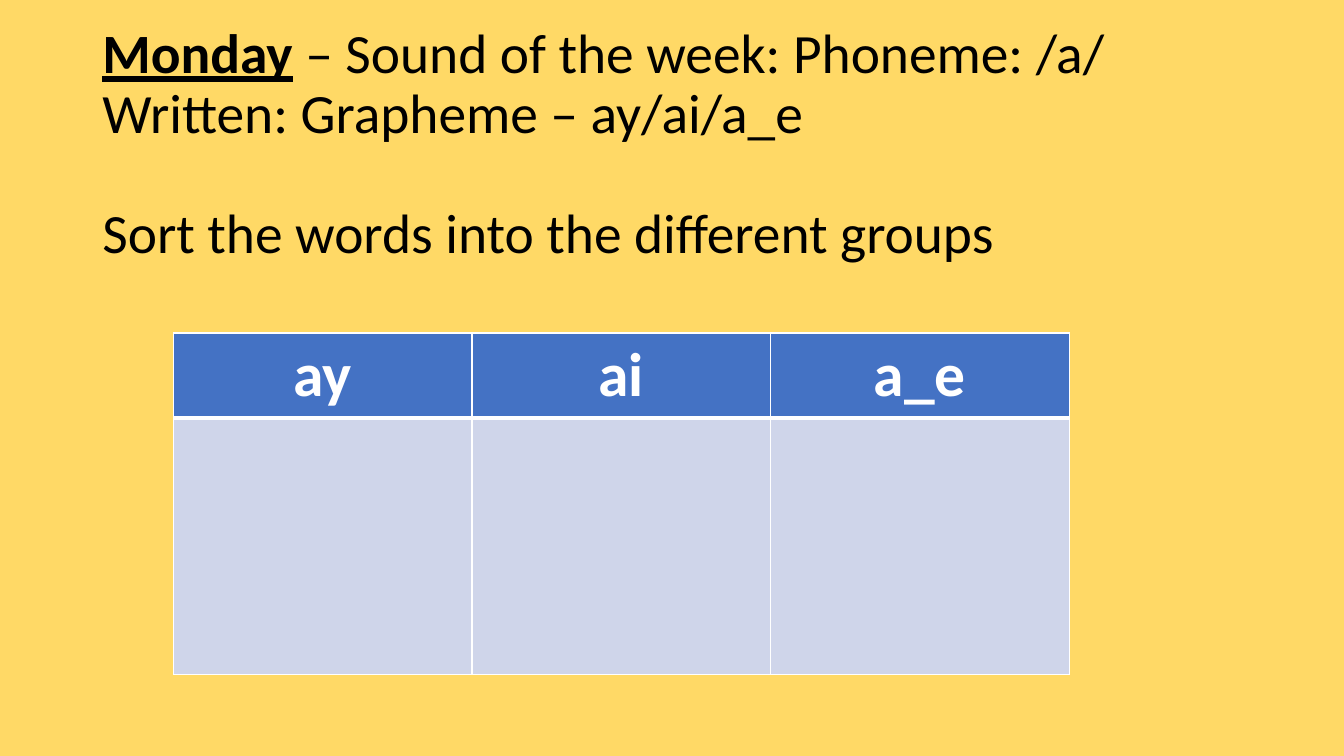
from lxml import etree
from pptx import Presentation
from pptx import util as u
from pptx.dml.color import RGBColor
from pptx.enum import text
from pptx.oxml import ns

FONT = "Calibri"
YELLOW, BLUE, PALE, WHITE, BLACK = "FFD966", "4472C4", "CFD5EA", "FFFFFF", "000000"

# Content: each title line is a list of (text, emphasised) and a gap above
TITLE_LINES = [
    ([("Monday", True), (" – Sound of the week: Phoneme: /a/", False)], 0),
    ([("Written: Grapheme – ay/ai/a_e", False)], 0),
    ([("Sort the words into the different groups", False)], 43),
]
GROUPS = ["ay", "ai", "a_e"]

# Layout in points
SLIDE_SIZE = (960, 540)
TITLE_BOX = (66, 51.75, 828, 104.4)
TABLE_LEFT, TABLE_TOP, TABLE_WIDTH = 123.84, 237.8, 640
ROW_HEIGHTS = (60.9, 183)


def color(value):
    return RGBColor.from_string(value)


def add_text(para, words, size, ink, bold=False, underline=False):
    span = para.add_run()
    span.text = words
    font = span.font
    font.name, font.size = FONT, u.Pt(size)
    font.bold, font.underline = bold, underline
    font.color.rgb = color(ink)


def format_cell(cell, fill, top, bottom):
    """Borders come before the fill in the cell's XML."""
    props = cell._tc.get_or_add_tcPr()
    for side, width in (("L", 1), ("R", 1), ("T", top), ("B", bottom)):
        line = etree.SubElement(props, ns.qn("a:ln" + side), w=str(u.Pt(width)))
        solid = etree.SubElement(line, ns.qn("a:solidFill"))
        etree.SubElement(solid, ns.qn("a:srgbClr"), val=WHITE)
    cell.fill.solid()
    cell.fill.fore_color.rgb = color(fill)


def add_title(page):
    title = page.shapes.title
    title.left, title.top, title.width, title.height = map(u.Pt, TITLE_BOX)
    frame = title.text_frame
    frame.word_wrap = True
    frame.auto_size = text.MSO_AUTO_SIZE.NONE
    frame.vertical_anchor = text.MSO_ANCHOR.MIDDLE
    for index, (parts, gap) in enumerate(TITLE_LINES):
        para = frame.add_paragraph() if index else frame.paragraphs[0]
        para.alignment = text.PP_ALIGN.LEFT
        para.line_spacing = 0.9
        para.space_before = u.Pt(gap)
        for words, strong in parts:
            add_text(para, words, 39.6, BLACK, bold=strong, underline=strong)


def add_sorting_table(page):
    frame = page.shapes.add_table(
        len(ROW_HEIGHTS), len(GROUPS), u.Pt(TABLE_LEFT), u.Pt(TABLE_TOP),
        u.Pt(TABLE_WIDTH), u.Pt(sum(ROW_HEIGHTS)))
    table = frame.table
    for row, height in zip(table.rows, ROW_HEIGHTS):
        row.height = u.Pt(height)
    for index, group in enumerate(GROUPS):
        table.columns[index].width = u.Pt(TABLE_WIDTH / len(GROUPS))
        header, body = table.cell(0, index), table.cell(1, index)
        format_cell(header, BLUE, top=1, bottom=3)
        format_cell(body, PALE, top=3, bottom=1)
        para = header.text_frame.paragraphs[0]
        para.alignment = text.PP_ALIGN.CENTER
        add_text(para, group, 44, WHITE, bold=True)


def main():
    deck = Presentation()
    deck.slide_width, deck.slide_height = map(u.Pt, SLIDE_SIZE)
    page = deck.slides.add_slide(deck.slide_layouts[5])
    page.background.fill.solid()
    page.background.fill.fore_color.rgb = color(YELLOW)
    add_title(page)
    add_sorting_table(page)
    deck.save("out.pptx")


if __name__ == "__main__":
    main()
